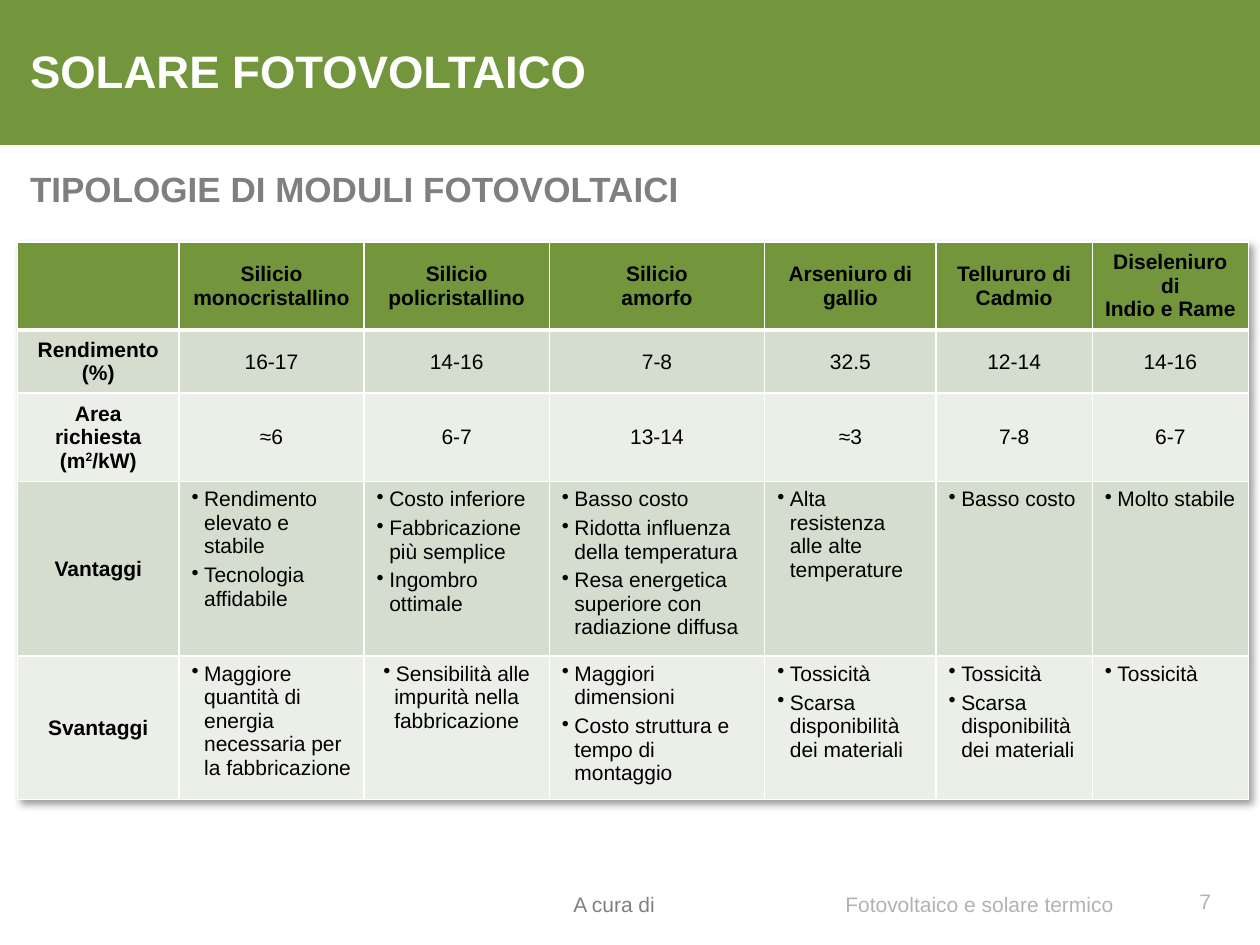
from lxml import etree
from pptx import Presentation
from pptx.dml.color import RGBColor
from pptx.enum.shapes import MSO_SHAPE
from pptx.enum.text import MSO_ANCHOR, PP_ALIGN
from pptx.oxml import parse_xml
from pptx.oxml.ns import qn
from pptx.util import Inches, Pt

RECT = MSO_SHAPE.RECTANGLE
TOP, MIDDLE = MSO_ANCHOR.TOP, MSO_ANCHOR.MIDDLE
LEFT, CENTER, RIGHT = PP_ALIGN.LEFT, PP_ALIGN.CENTER, PP_ALIGN.RIGHT
A_NS = 'xmlns:a="http://schemas.openxmlformats.org/drawingml/2006/main"'

COLORS = {
    "green": "73963D", "white": "FFFFFF", "black": "000000",
    "subtitle": "7F7F7F", "author": "808080", "footer": "B2B2B2",
    "band_dark": "D5DDCE", "band_light": "EBEFE8",
}

COL_WIDTHS = [1.28, 1.47, 1.47, 1.71, 1.36, 1.24, 1.24]
ROW_HEIGHTS = [0.66, 0.47, 0.66, 1.3, 1.08]
HEADERS = ["", "Silicio monocristallino", "Silicio\npolicristallino", "Silicio\namorfo",
           "Arseniuro di gallio", "Tellururo di\nCadmio", "Diseleniuro di\nIndio e Rame"]
FIGURES = [
    ["Rendimento (%)", "16-17", "14-16", "7-8", "32.5", "12-14", "14-16"],
    ["Area richiesta (m^2^/kW)", "≈6", "6-7", "13-14", "≈3", "7-8", "6-7"],
]
LISTS = [
    ["Vantaggi",
     "Rendimento elevato e stabile\nTecnologia affidabile",
     "Costo inferiore\nFabbricazione più semplice\nIngombro ottimale",
     "Basso costo\nRidotta influenza della temperatura\n"
     "Resa energetica superiore con radiazione diffusa",
     "Alta resistenza alle alte temperature", "Basso costo", "Molto stabile"],
    ["Svantaggi",
     "Maggiore quantità di energia necessaria per la fabbricazione",
     "Sensibilità alle\nimpurità nella\nfabbricazione",
     "Maggiori dimensioni\nCosto struttura e tempo di montaggio",
     "Tossicità\nScarsa disponibilità dei materiali",
     "Tossicità\nScarsa disponibilità dei materiali", "Tossicità"],
]


def rgb(name):
    return RGBColor.from_string(COLORS[name])


def add_bullet(p, indent=0.1):
    pPr = p._p.get_or_add_pPr()
    pPr.set("marL", str(Inches(indent)))
    pPr.set("indent", str(-Inches(indent)))
    etree.SubElement(pPr, qn("a:buChar")).set("char", "•")


def write(tf, text, size=12, color="black", bold=False, align=LEFT, bullets=0, gap=0):
    """Put one paragraph per line; ^x^ is superscript, the first `bullets` lines get a bullet."""
    for i, line in enumerate(text.split("\n")):
        p = tf.paragraphs[0] if i == 0 else tf.add_paragraph()
        p.alignment = align
        if i and gap:
            p.space_before = Pt(gap)
        if i < bullets:
            add_bullet(p)
        for j, part in enumerate(line.split("^")):
            r = p.add_run()
            r.text = part
            r.font.name, r.font.size, r.font.bold = "Arial", Pt(size), bold
            r.font.color.rgb = rgb(color)
            if j % 2:
                r.font._element.set("baseline", "30000")


def add_text(s, box, text, anchor=MIDDLE, insets=(0.1, 0.05, 0.1, 0.05), **fmt):
    tf = s.shapes.add_textbox(*map(Inches, box)).text_frame
    tf.word_wrap = True
    tf.vertical_anchor = anchor
    tf.margin_left, tf.margin_top, tf.margin_right, tf.margin_bottom = map(Inches, insets)
    write(tf, text, **fmt)


def add_heading(s, x, y, w, h):
    band = s.shapes.add_shape(RECT, *map(Inches, (x, y, w, h)))
    band.shadow.inherit = False
    band.fill.solid()
    band.fill.fore_color.rgb = rgb("green")
    band.line.fill.background()
    add_text(s, (x + 0.14, y + 0.34, w - 1, 0.44), "SOLARE FOTOVOLTAICO",
             insets=(0.1, 0, 0.1, 0), size=26, color="white", bold=True)
    add_text(s, (x + 0.14, y + h + 0.13, w - 1, 0.44), "TIPOLOGIE DI MODULI FOTOVOLTAICI",
             anchor=TOP, size=20, color="subtitle", bold=True)


def style_cell(cell, fill, bottom=1, top=1):
    cell.fill.solid()
    cell.fill.fore_color.rgb = rgb(fill)
    tcPr = cell._tc.get_or_add_tcPr()
    for i, (side, width) in enumerate([("L", 1), ("R", 1), ("T", top), ("B", bottom)]):
        tcPr.insert(i, parse_xml(
            f'<a:ln{side} {A_NS} w="{Pt(width)}"><a:solidFill>'
            f'<a:srgbClr val="{COLORS["white"]}"/></a:solidFill></a:ln{side}>'))


def add_table_shadow(table):
    table._tbl.tblPr.insert(0, parse_xml(
        f'<a:effectLst {A_NS}><a:outerShdw blurRad="50800" dist="38100" dir="2700000" '
        f'algn="tl" rotWithShape="0"><a:srgbClr val="{COLORS["black"]}">'
        '<a:alpha val="40000"/></a:srgbClr></a:outerShdw></a:effectLst>'))


def add_module_table(s, x, y):
    rows = [HEADERS] + FIGURES + LISTS
    first_list = 1 + len(FIGURES)
    table = s.shapes.add_table(len(rows), len(COL_WIDTHS), Inches(x), Inches(y),
                               Inches(sum(COL_WIDTHS)), Inches(sum(ROW_HEIGHTS))).table
    add_table_shadow(table)
    for col, width in zip(table.columns, COL_WIDTHS):
        col.width = Inches(width)
    for row, height in zip(table.rows, ROW_HEIGHTS):
        row.height = Inches(height)
    for i, row in enumerate(rows):
        fill = "green" if i == 0 else ("band_dark" if i % 2 else "band_light")
        for j, text in enumerate(row):
            cell = table.cell(i, j)
            style_cell(cell, fill, bottom=3 if i == 0 else 1, top=3 if i == 1 else 1)
            if i >= first_list and j:
                cell.vertical_anchor = TOP
                # The impurity note is one centred item broken over several lines
                centred = text.startswith("Sensibilità")
                write(cell.text_frame, text, align=CENTER if centred else LEFT,
                      bullets=1 if centred else len(text), gap=0 if centred else 3)
            else:
                cell.vertical_anchor = MIDDLE
                write(cell.text_frame, text, bold=i == 0 or j == 0, align=CENTER)


def add_footer(s, y, h):
    insets = (0, 0.05, 0.1, 0)
    add_text(s, (4.55, y, 2.2, h), "A cura di", insets=insets, color="author")
    add_text(s, (6.71, y, 2.43, h), "Fotovoltaico e solare termico", insets=insets,
             color="footer")
    add_text(s, (9.14, y, 0.57, h), "7", color="footer", align=RIGHT)


def main():
    prs = Presentation()
    prs.slide_width, prs.slide_height = Inches(10), Inches(7.5)
    s = prs.slides.add_slide(prs.slide_layouts[6])
    add_heading(s, 0, 0, 10, 1.15)
    add_module_table(s, 0.14, 1.92)
    add_footer(s, 6.95, 0.4)
    prs.save("out.pptx")


if __name__ == "__main__":
    main()
